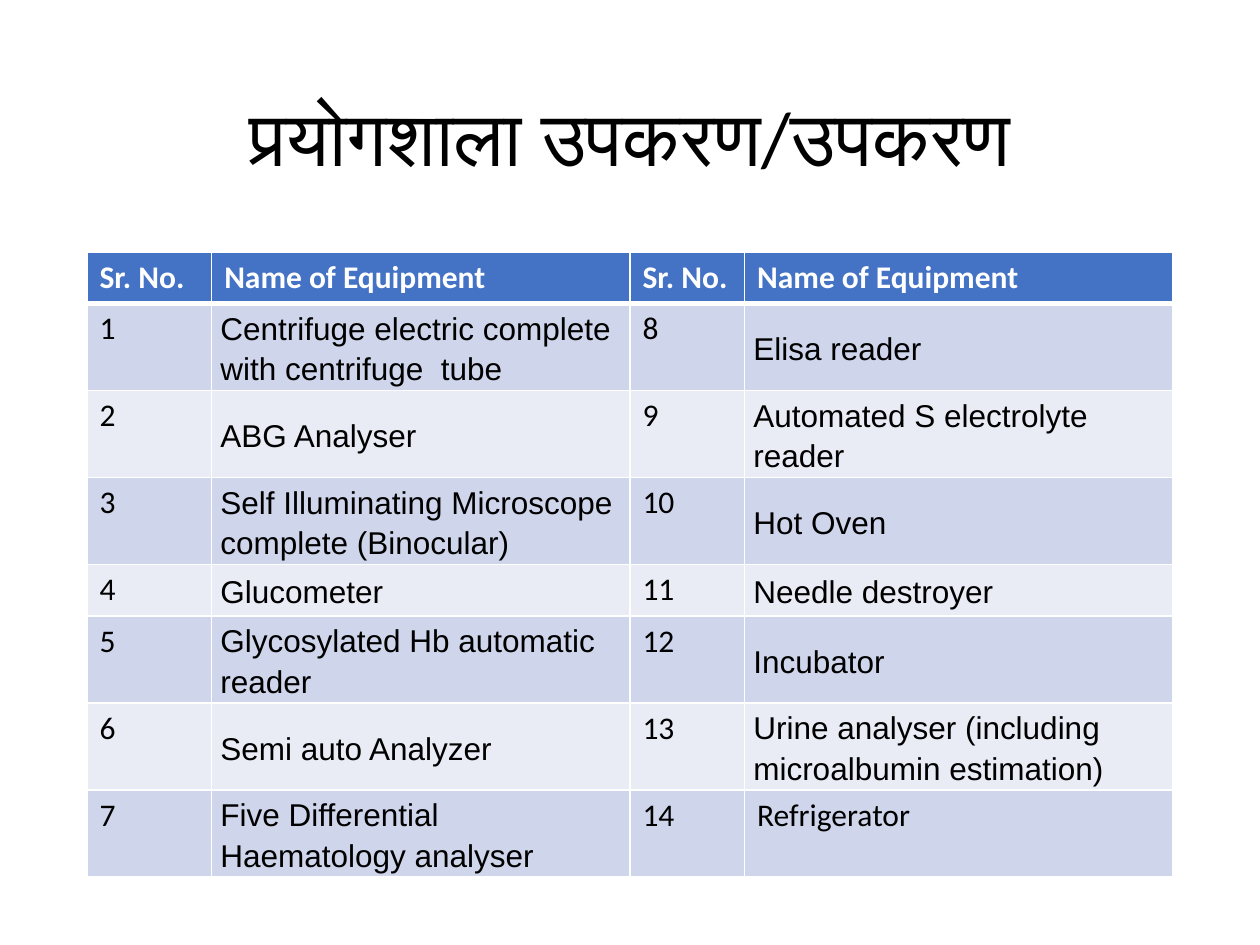
import pptx
import pptx.util
import pptx.dml.color
import pptx.enum.text
import pptx.oxml
import pptx.oxml.ns
from lxml import etree

Inches, Pt = pptx.util.Inches, pptx.util.Pt
MIDDLE = pptx.enum.text.MSO_ANCHOR.MIDDLE

# Content
TITLE = "प्रयोगशाला उपकरण/उपकरण"
HEADINGS = ["Sr. No.", "Name of Equipment"] * 2
EQUIPMENT = [
    "Centrifuge electric complete with centrifuge  tube",
    "ABG Analyser",
    "Self Illuminating Microscope complete (Binocular)",
    "Glucometer",
    "Glycosylated Hb automatic reader",
    "Semi auto Analyzer",
    "Five Differential Haematology analyser",
    "Elisa reader",
    "Automated S electrolyte reader",
    "Hot Oven",
    "Needle destroyer",
    "Incubator",
    "Urine analyser (including microalbumin estimation)",
    "Refrigerator",
]
COLORS = {"header": "4472C4", "odd": "CFD5EA", "even": "E9EBF5",
          "white": "FFFFFF", "black": "000000"}

# Layout
LEFT, WIDTH = 0.69, 8.62
COLUMN_WIDTHS = [0.99, 3.32, 0.91, 3.4]
ROW_HEIGHT = 0.41


def rgb(name):
    return pptx.dml.color.RGBColor.from_string(COLORS[name])


def set_font(para, face, size, color, bold=False):
    para.font.name, para.font.size, para.font.bold = face, Pt(size), bold
    para.font.color.rgb = rgb(color)


def set_borders(cell, bottom):
    """White cell edges; widths in points."""
    properties = cell._tc.get_or_add_tcPr()
    for side, width in (("L", 1), ("R", 1), ("T", 1), ("B", bottom)):
        line = etree.SubElement(properties, pptx.oxml.ns.qn(f"a:ln{side}"), w=str(Pt(width)))
        fill = etree.SubElement(line, pptx.oxml.ns.qn("a:solidFill"))
        etree.SubElement(fill, pptx.oxml.ns.qn("a:srgbClr"), val=COLORS["white"])


def fill_cell(cell, text, fill, color="black", bold=False, bottom=1, arial=False):
    set_borders(cell, bottom)
    cell.fill.solid()
    cell.fill.fore_color.rgb = rgb(fill)
    cell.text = text
    para = cell.text_frame.paragraphs[0]
    if arial:
        cell.vertical_anchor = MIDDLE
        cell.margin_left = cell.margin_right = Inches(0.07)
        cell.margin_top = cell.margin_bottom = 0
        para.line_spacing, para.space_after = 1.15, Pt(10)
    set_font(para, "Arial" if arial else "Calibri", 18, color, bold)


deck = pptx.Presentation()
deck.slide_width, deck.slide_height = Inches(10), Inches(7.5)
page = deck.slides.add_slide(deck.slide_layouts[6])

# Title
box = page.shapes.add_textbox(Inches(LEFT), Inches(0.4), Inches(WIDTH), Inches(1.45))
box.text_frame.word_wrap = True
box.text_frame.vertical_anchor = MIDDLE
heading = box.text_frame.paragraphs[0]
heading.text = TITLE
heading.alignment = pptx.enum.text.PP_ALIGN.CENTER
heading.line_spacing = 0.9
set_font(heading, "Calibri", 44, "black")

# Equipment table: numbered down the left half, then the right half
half = len(EQUIPMENT) // 2
table = page.shapes.add_table(half + 1, len(HEADINGS), Inches(LEFT), Inches(2),
                              Inches(WIDTH), Inches(ROW_HEIGHT * (half + 1))).table
for column, width in zip(table.columns, COLUMN_WIDTHS):
    column.width = Inches(width)
for row in table.rows:
    row.height = Inches(ROW_HEIGHT)

for index, text in enumerate(HEADINGS):
    fill_cell(table.cell(0, index), text, "header", "white", bold=True, bottom=3)

for index, name in enumerate(EQUIPMENT):
    side, position = divmod(index, half)
    row, column = position + 1, side * 2
    band = "odd" if row % 2 else "even"
    fill_cell(table.cell(row, column), str(index + 1), band)
    fill_cell(table.cell(row, column + 1), name, band, arial=name != "Refrigerator")

deck.save("out.pptx")
